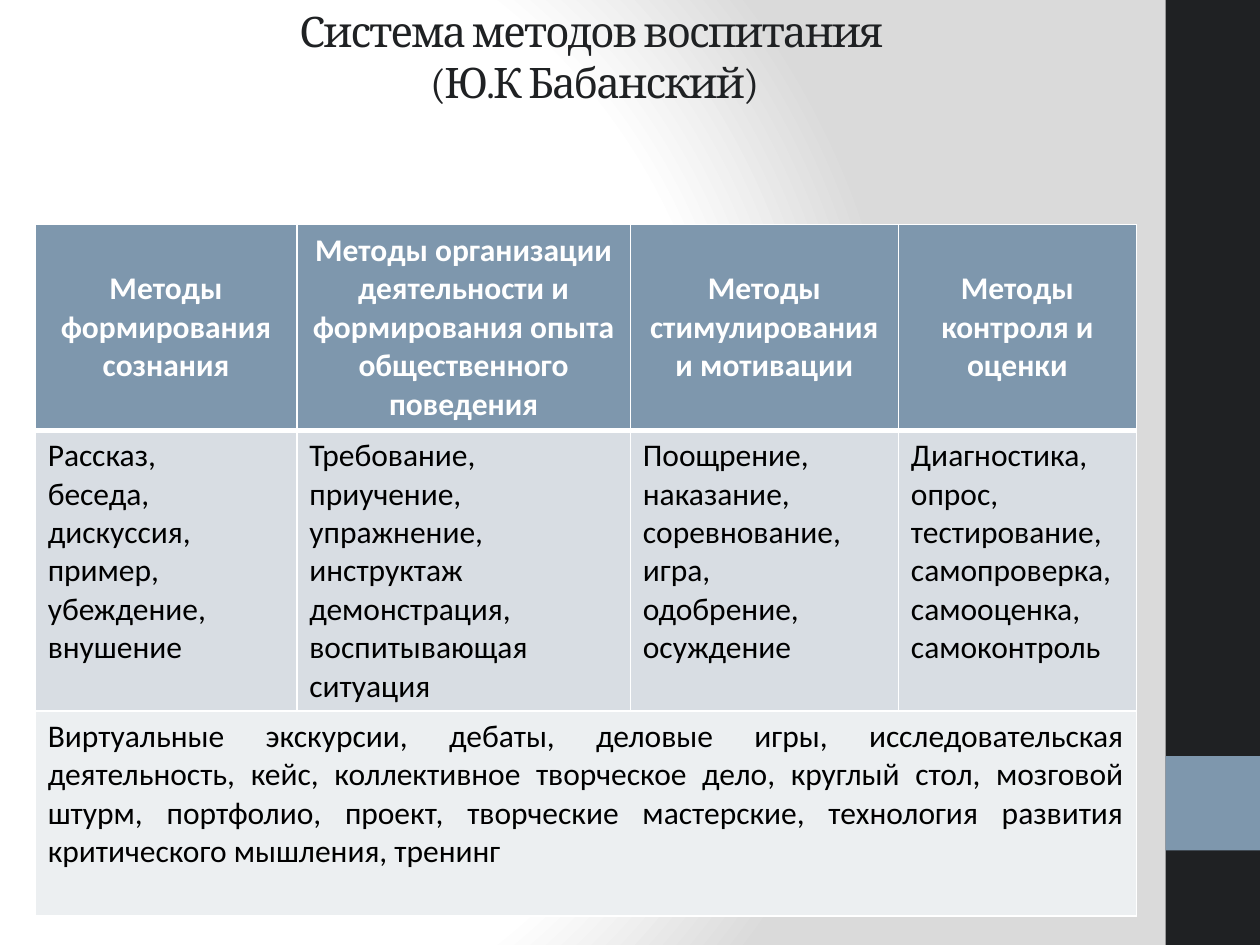
from lxml.etree import SubElement
from pptx import Presentation
from pptx.dml.color import RGBColor
from pptx.enum.shapes import MSO_SHAPE
from pptx.enum.text import MSO_ANCHOR, PP_ALIGN
from pptx.oxml import parse_xml
from pptx.oxml.ns import nsdecls, qn
from pptx.util import Pt

COLORS = {
    "white": "FFFFFF", "gray": "DADADA", "dark": "1F2123", "blue": "7E97AD",
    "band": "D8DDE3", "pale": "ECEFF1", "black": "000000",
}
TITLE = "Система методов воспитания \v(Ю.К Бабанский)"
HEADERS = [
    "Методы формирования сознания",
    "Методы организации деятельности и формирования опыта общественного поведения",
    "Методы стимулирования и мотивации",
    "Методы контроля и оценки",
]
METHODS = [
    "Рассказ,\nбеседа, дискуссия, пример, убеждение, внушение",
    "Требование, приучение, упражнение, инструктаж демонстрация, воспитывающая ситуация",
    "Поощрение, наказание,\nсоревнование,\nигра,\nодобрение, осуждение",
    "Диагностика, опрос, тестирование, самопроверка, самооценка, самоконтроль",
]
MODERN_FORMS = (
    "Виртуальные экскурсии, дебаты, деловые игры, исследовательская деятельность, "
    "кейс, коллективное творческое дело, круглый стол, мозговой штурм, портфолио, "
    "проект, творческие мастерские, технология развития критического мышления, тренинг"
)
ROWS = [HEADERS, METHODS, [MODERN_FORMS]]
ROW_FORMATS = [
    {"fill": "blue", "color": "white", "bold": True,
     "align": PP_ALIGN.CENTER, "anchor": MSO_ANCHOR.MIDDLE},
    {"fill": "band", "color": "black", "bold": False,
     "align": PP_ALIGN.LEFT, "anchor": MSO_ANCHOR.TOP},
    {"fill": "pale", "color": "black", "bold": False,
     "align": PP_ALIGN.JUSTIFY, "anchor": MSO_ANCHOR.TOP},
]
COLUMN_WIDTHS = [149.5, 190.6, 153.2, 136]
ROW_HEIGHTS = [117.5, 160.5, 117]
SIDEBAR = [("dark", 0, 540), ("blue", 432, 54)]


def rgb(name):
    return RGBColor.from_string(COLORS[name])


def set_background(slide):
    """Fill the background with a circular gradient, which has no public method."""
    slide.background.fill.solid()
    properties = slide.background._cSld.bg.bgPr
    stops = "".join(
        f'<a:gs pos="{position * 1000}"><a:srgbClr val="{COLORS[name]}"/></a:gs>'
        for position, name in [(0, "white"), (75, "white"), (100, "gray")])
    gradient = parse_xml(
        f'<a:gradFill {nsdecls("a")} rotWithShape="1"><a:gsLst>{stops}</a:gsLst>'
        '<a:path path="circle"><a:fillToRect l="20000" t="50000" r="100000" b="50000"/>'
        '</a:path></a:gradFill>')
    properties.replace(properties[0], gradient)


def style_text(frame, align, name, size, color, bold):
    for paragraph in frame.paragraphs:
        paragraph.alignment = align
        for run in paragraph.runs:
            run.font.color.rgb = rgb(color)
            for attribute, value in {"name": name, "size": Pt(size), "bold": bold}.items():
                setattr(run.font, attribute, value)


def set_borders(cell, widths):
    properties = cell._tc.get_or_add_tcPr()
    for index, (side, width) in enumerate(widths.items()):
        line = SubElement(properties, qn(f"a:ln{side}"), w=str(Pt(width)))
        fill = SubElement(line, qn("a:solidFill"))
        SubElement(fill, qn("a:srgbClr"), val=COLORS["white"])
        properties.insert(index, line)


def add_sidebar(slide):
    for color, top, height in SIDEBAR:
        shape = slide.shapes.add_shape(
            MSO_SHAPE.RECTANGLE, Pt(666), Pt(top), Pt(54), Pt(height))
        shape.shadow.inherit = False
        shape.fill.solid()
        shape.fill.fore_color.rgb = rgb(color)
        shape.line.fill.background()


def add_title(slide):
    frame = slide.shapes.add_textbox(Pt(25.2), Pt(9.4), Pt(629.3), Pt(45.4)).text_frame
    frame.word_wrap = True
    frame.vertical_anchor = MSO_ANCHOR.MIDDLE
    frame.text = TITLE
    style_text(frame, PP_ALIGN.CENTER, "Cambria", 24, "dark", False)
    for run in frame.paragraphs[0].runs:
        run.font._element.set("spc", "-100")


def add_methods_table(slide):
    table = slide.shapes.add_table(
        len(ROWS), len(COLUMN_WIDTHS), Pt(20.1), Pt(128.4),
        Pt(sum(COLUMN_WIDTHS)), Pt(sum(ROW_HEIGHTS))).table
    for column, width in zip(table.columns, COLUMN_WIDTHS):
        column.width = Pt(width)
    for row, height in zip(table.rows, ROW_HEIGHTS):
        row.height = Pt(height)
    table.cell(2, 0).merge(table.cell(2, 3))
    for row_index, (texts, style) in enumerate(zip(ROWS, ROW_FORMATS)):
        widths = {"L": 1, "R": 1, "T": 3 if row_index == 1 else 1,
                  "B": 3 if row_index == 0 else 1}
        for cell in table.rows[row_index].cells:
            cell.fill.solid()
            cell.fill.fore_color.rgb = rgb(style["fill"])
            set_borders(cell, widths)
        for column_index, text in enumerate(texts):
            cell = table.cell(row_index, column_index)
            cell.text = text
            cell.vertical_anchor = style["anchor"]
            style_text(cell.text_frame, style["align"], "Calibri", 18,
                       style["color"], style["bold"])


def main():
    presentation = Presentation()
    presentation.slide_width, presentation.slide_height = Pt(720), Pt(540)
    slide = presentation.slides.add_slide(presentation.slide_layouts[6])
    set_background(slide)
    add_sidebar(slide)
    add_title(slide)
    add_methods_table(slide)
    presentation.save("out.pptx")


if __name__ == "__main__":
    main()
